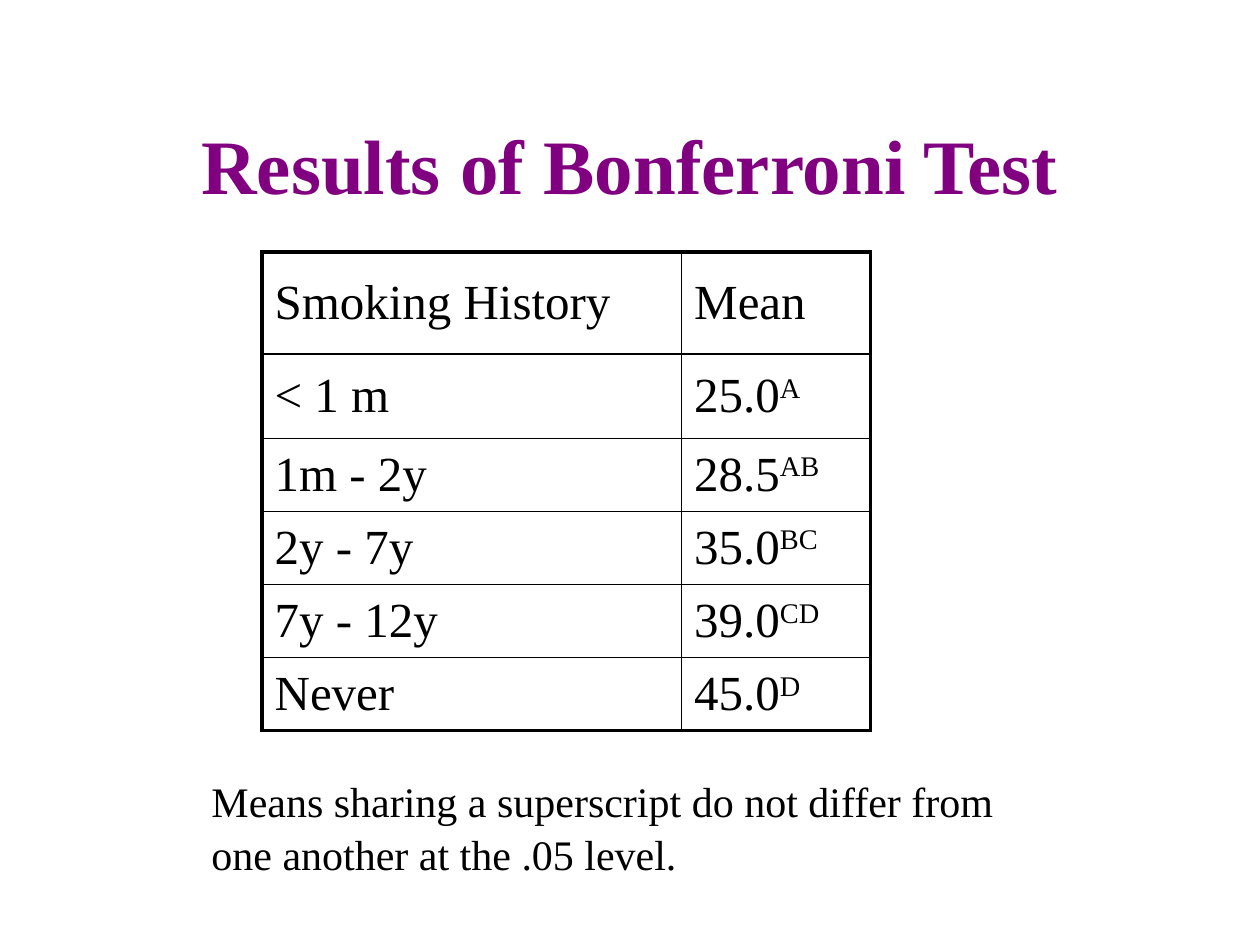
from lxml import etree
from pptx import Presentation
from pptx.dml.color import RGBColor
from pptx.enum.text import MSO_ANCHOR, PP_ALIGN
from pptx.oxml.ns import qn
from pptx.util import Inches, Pt

MIDDLE, TOP = MSO_ANCHOR.MIDDLE, MSO_ANCHOR.TOP
LEFT, CENTER = PP_ALIGN.LEFT, PP_ALIGN.CENTER

# Content
TITLE = "Results of Bonferroni Test"
HEADER = ("Smoking History", "Mean")
GROUPS = [  # smoking history, mean, superscript
    ("< 1 m", "25.0", "A"),
    ("1m - 2y", "28.5", "AB"),
    ("2y - 7y", "35.0", "BC"),
    ("7y - 12y", "39.0", "CD"),
    ("Never", "45.0", "D"),
]
NOTE = "Means sharing a superscript do not differ from one another at the .05 level."

# Format
COLORS = {"title": "800080", "text": "000000", "border": "000000"}
FONT = "Times New Roman"
COLUMN_WIDTHS = (3.33, 1.5)
ROW_HEIGHTS = (0.81, 0.67) + (0.58,) * 4
OUTER, INNER = 2.25, 1
SUPERSCRIPT = "30000"


def add_run(paragraph, text, size, color="text", bold=False):
    run = paragraph.add_run()
    run.text = text
    run.font.color.rgb = RGBColor.from_string(COLORS[color])
    for name, value in {"name": FONT, "size": Pt(size), "bold": bold}.items():
        setattr(run.font, name, value)
    return run


def add_text(slide, box, text, size, color, bold, align, anchor, spacing):
    frame = slide.shapes.add_textbox(*map(Inches, box)).text_frame
    frame.word_wrap = True
    frame.vertical_anchor = anchor
    paragraph = frame.paragraphs[0]
    paragraph.alignment = align
    paragraph.line_spacing = spacing
    add_run(paragraph, text, size, color, bold)


def set_borders(cell, widths):
    properties = cell._tc.get_or_add_tcPr()
    for position, (side, width) in enumerate(widths.items()):
        line = etree.Element(qn(f"a:ln{side}"), w=str(Pt(width)))
        fill = etree.SubElement(line, qn("a:solidFill"))
        etree.SubElement(fill, qn("a:srgbClr"), val=COLORS["border"])
        properties.insert(position, line)


def add_means_table(slide):
    rows = [(*HEADER, "")] + GROUPS
    last_row, last_column = len(rows) - 1, len(HEADER) - 1
    table = slide.shapes.add_table(
        len(rows), len(HEADER), Inches(2.08), Inches(2),
        Inches(sum(COLUMN_WIDTHS)), Inches(sum(ROW_HEIGHTS))).table
    table.first_row = table.horz_banding = False
    for column, width in zip(table.columns, COLUMN_WIDTHS):
        column.width = Inches(width)
    for row, height in zip(table.rows, ROW_HEIGHTS):
        row.height = Inches(height)

    for r, (history, mean, superscript) in enumerate(rows):
        for c, text in enumerate((history, mean)):
            cell = table.cell(r, c)
            cell.fill.background()
            cell.vertical_anchor = MIDDLE
            paragraph = cell.text_frame.paragraphs[0]
            add_run(paragraph, text, 28)
            if c == last_column and superscript:
                mark = add_run(paragraph, superscript, 28)
                mark.font._element.set("baseline", SUPERSCRIPT)
            # Thick lines around the table, thin lines inside it
            outside = {"L": c == 0, "R": c == last_column,
                       "T": r == 0, "B": r == last_row}
            set_borders(cell, {side: OUTER if edge else INNER
                               for side, edge in outside.items()})


def main():
    deck = Presentation()
    deck.slide_width, deck.slide_height = Inches(10), Inches(7.5)
    slide = deck.slides.add_slide(deck.slide_layouts[6])

    add_means_table(slide)
    add_text(slide, (1.58, 6.08, 6.58, 0.9), NOTE, 24, "text", False, LEFT, TOP, 1.06)
    add_text(slide, (0.75, 0.67, 8.5, 1.25), TITLE, 44, "title", True, CENTER, MIDDLE, 1.0)

    deck.save("out.pptx")


if __name__ == "__main__":
    main()
